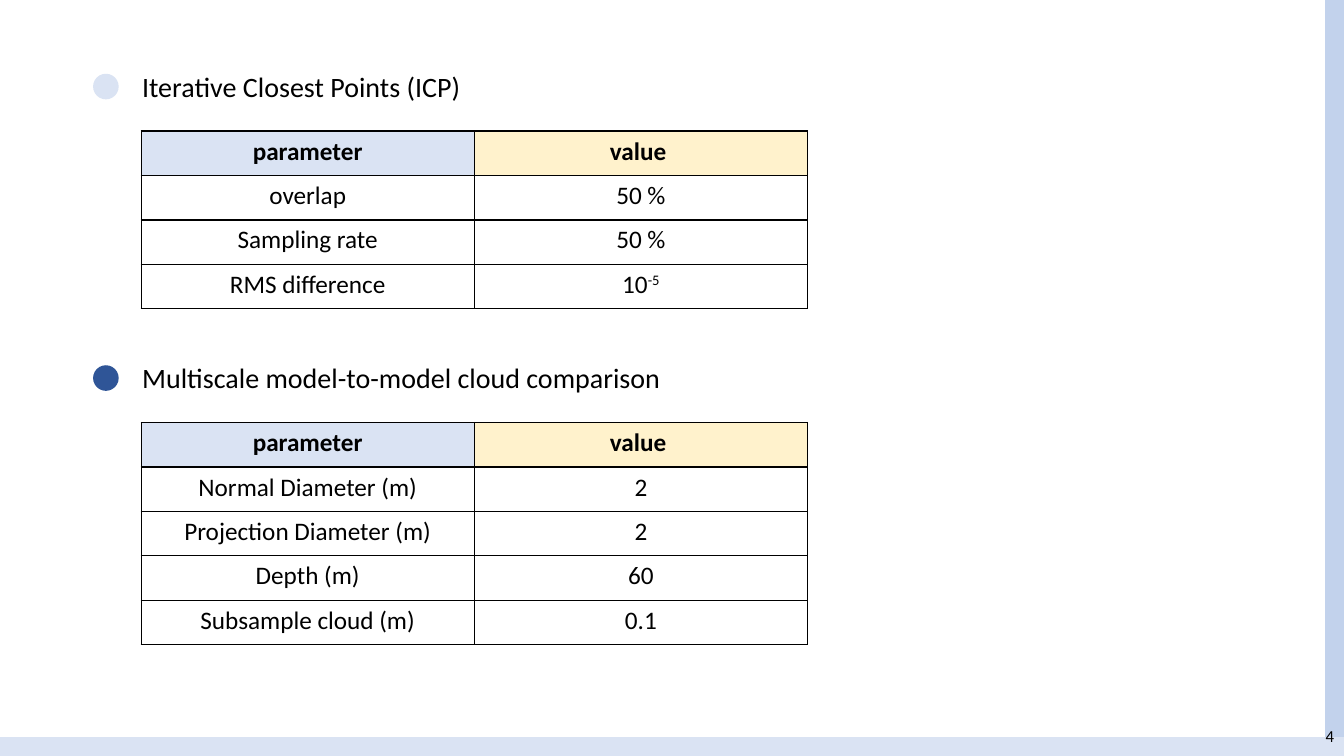
import pptx
import pptx.dml.color
import pptx.enum.shapes
import pptx.enum.text
import pptx.oxml
import pptx.oxml.ns
import pptx.util

Pt = pptx.util.Pt
RGBColor = pptx.dml.color.RGBColor
SHAPE = pptx.enum.shapes.MSO_SHAPE
ALIGN = pptx.enum.text.PP_ALIGN
ANCHOR = pptx.enum.text.MSO_ANCHOR

BLACK = RGBColor(0x00, 0x00, 0x00)
WHITE = RGBColor(0xFF, 0xFF, 0xFF)
PALE_BLUE = RGBColor(0xDA, 0xE3, 0xF3)
SOFT_BLUE = RGBColor(0xC2, 0xD2, 0xEC)
DARK_BLUE = RGBColor(0x2F, 0x55, 0x97)
CREAM = RGBColor(0xFF, 0xF2, 0xCC)

WIDTH, HEIGHT = 960, 540
HEADER = ("parameter", "value ")


class Deck:
    font = "Calibri"
    heading_size, cell_size, number_size = 20, 18, 12
    col_width, row_height = 238, 31.75

    def __init__(self, prs, layout):
        self.s = prs.slides.add_slide(prs.slide_layouts[layout])

    def style(self, p, size, align, bold=False):
        p.alignment = align
        for r in p.runs:
            r.font.name = self.font
            r.font.size = Pt(size)
            r.font.bold = bold
            r.font.color.rgb = BLACK

    def shape(self, kind, x, y, w, h, color):
        sp = self.s.shapes.add_shape(kind, Pt(x), Pt(y), Pt(w), Pt(h))
        sp.shadow.inherit = False
        sp.fill.solid()
        sp.fill.fore_color.rgb = color
        sp.line.color.rgb = color
        sp.line.width = Pt(1)

    def heading(self, idx, text, x, y, w, h):
        sp = self.s.placeholders[idx]
        sp.left, sp.top, sp.width, sp.height = Pt(x), Pt(y), Pt(w), Pt(h)
        tf = sp.text_frame
        tf.text = text
        tf.word_wrap = False
        tf.auto_size = pptx.enum.text.MSO_AUTO_SIZE.NONE
        tf.vertical_anchor = ANCHOR.TOP
        p = tf.paragraphs[0]
        p.space_before = Pt(0)
        self.style(p, self.heading_size, ALIGN.LEFT)

    def number(self, text, x, y, w, h):
        tf = self.s.shapes.add_textbox(Pt(x), Pt(y), Pt(w), Pt(h)).text_frame
        tf.text = text
        tf.word_wrap = True
        tf.vertical_anchor = ANCHOR.MIDDLE
        self.style(tf.paragraphs[0], self.number_size, ALIGN.RIGHT)

    def borders(self, cell):
        tcPr = cell._tc.get_or_add_tcPr()
        for side in ("lnL", "lnR", "lnT", "lnB"):
            tcPr.append(pptx.oxml.parse_xml(
                f'<a:{side} {pptx.oxml.ns.nsdecls("a")} w="{Pt(1)}">'
                f'<a:solidFill><a:srgbClr val="{BLACK}"/></a:solidFill></a:{side}>'))

    def cell(self, cell, text, color, bold):
        self.borders(cell)
        cell.fill.solid()
        cell.fill.fore_color.rgb = color
        # A caret starts an exponent
        base, _, exponent = text.partition("^")
        p = cell.text_frame.paragraphs[0]
        p.text = base
        if exponent:
            r = p.add_run()
            r.text = exponent
            r._r.get_or_add_rPr().set("baseline", "30000")
        self.style(p, self.cell_size, ALIGN.CENTER, bold)

    def table(self, x, y, rows):
        rows = [HEADER, *rows]
        table = self.s.shapes.add_table(
            len(rows), len(HEADER), Pt(x), Pt(y),
            Pt(self.col_width * len(HEADER)), Pt(self.row_height * len(rows))).table
        table.first_row = table.horz_banding = False
        for i, row in enumerate(rows):
            for j, text in enumerate(row):
                color = WHITE if i else (PALE_BLUE, CREAM)[j]
                self.cell(table.cell(i, j), text, color, bold=i == 0)

    def section(self, idx, y, text, color, rows):
        self.shape(SHAPE.OVAL, 67, y + 7.2, 17.3, 17.3, color)
        self.heading(idx, text, 94.3, y, 392, 31.5)
        self.table(100.8, y + 47.6, rows)

    def remove_empty(self):
        for sp in list(self.s.placeholders):
            if not sp.text_frame.text:
                sp._element.getparent().remove(sp._element)


def main():
    prs = pptx.Presentation()
    prs.slide_width, prs.slide_height = Pt(WIDTH), Pt(HEIGHT)
    deck = Deck(prs, layout=4)  # Comparison: two headed sections

    # Edge bars and page number
    deck.shape(SHAPE.RECTANGLE, 947.3, 0, 12.7, HEIGHT, SOFT_BLUE)
    deck.shape(SHAPE.RECTANGLE, 0, 527.3, WIDTH, 12.7, PALE_BLUE)
    deck.number("4", 744, 511.5, 216, 28.75)

    # Parameter sections
    deck.section(1, 46, "Iterative Closest Points (ICP)", PALE_BLUE, [
        ("overlap", "50 %"),
        ("Sampling rate", "50 %"),
        ("RMS difference", "10^-5"),
    ])
    deck.section(3, 254.2, "Multiscale model-to-model cloud comparison", DARK_BLUE, [
        ("Normal Diameter (m)", "2"),
        ("Projection Diameter (m)", "2"),
        ("Depth (m)", "60"),
        ("Subsample cloud (m)", "0.1"),
    ])

    deck.remove_empty()
    prs.save("out.pptx")


if __name__ == "__main__":
    main()
